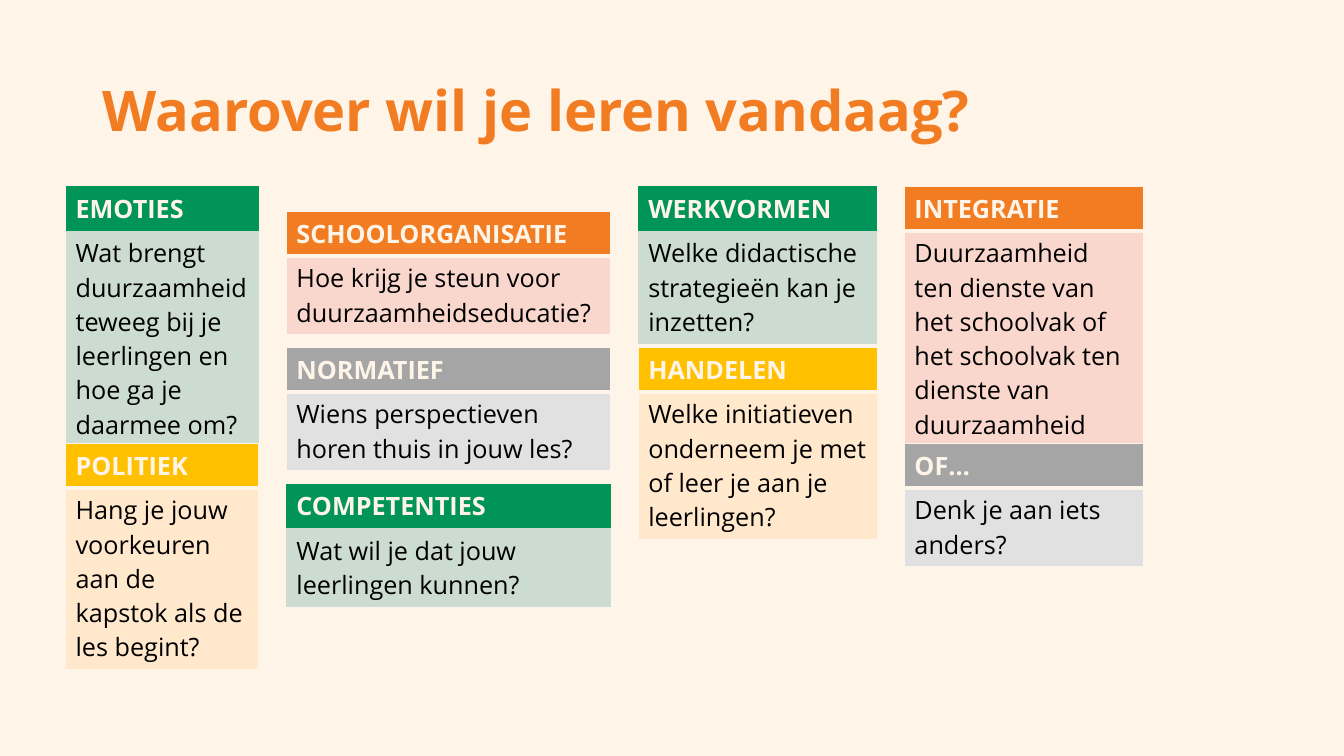
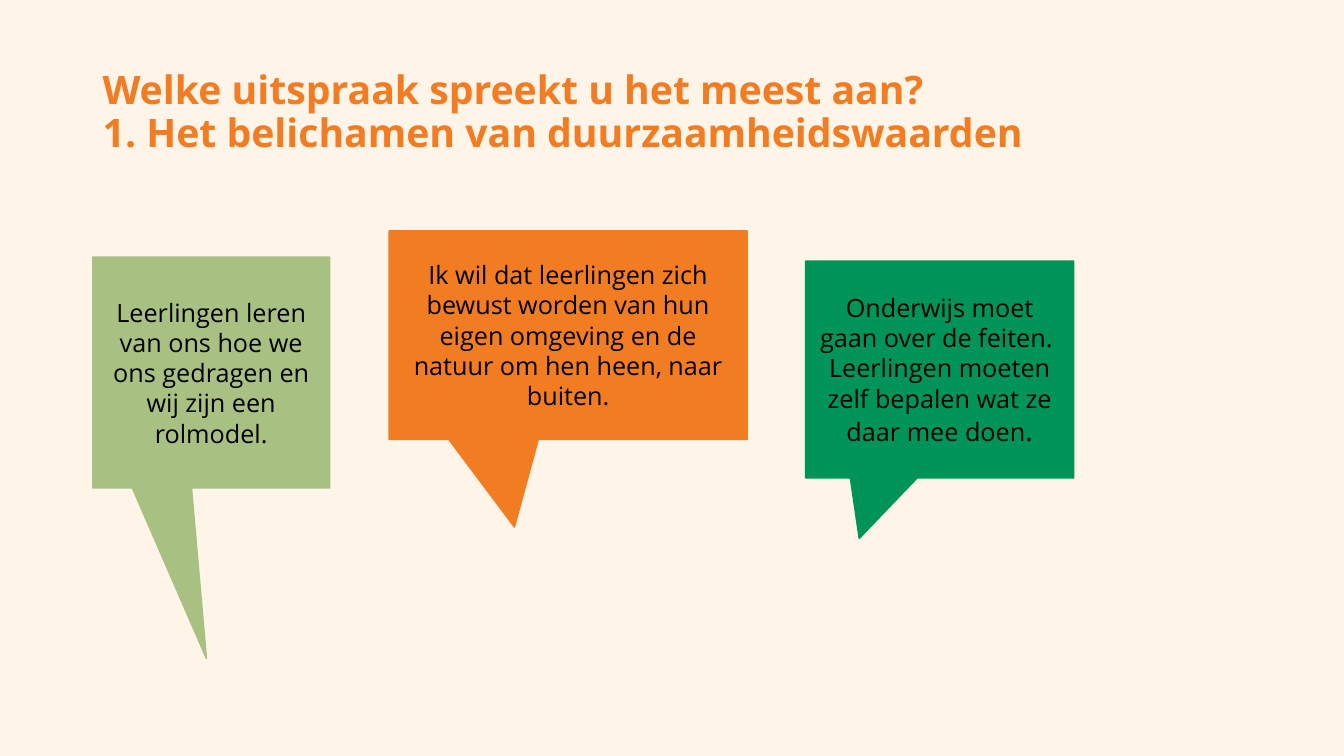
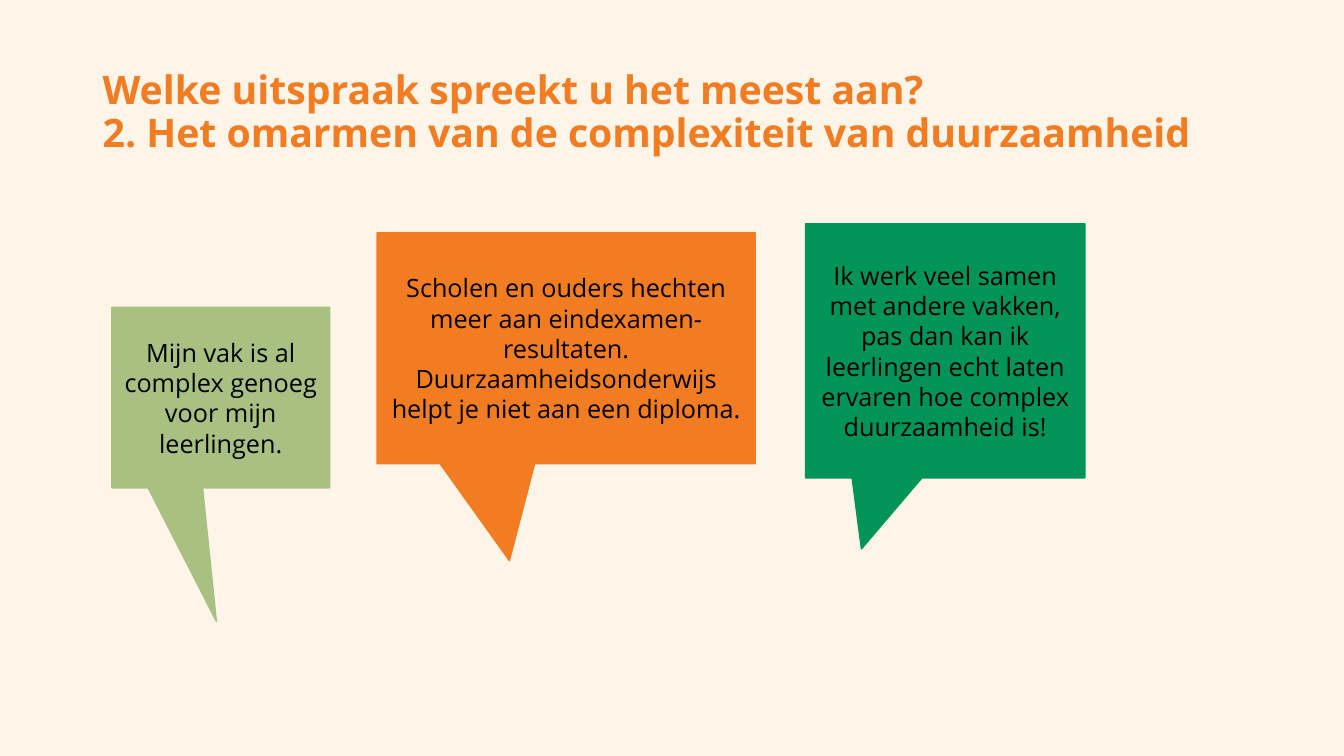
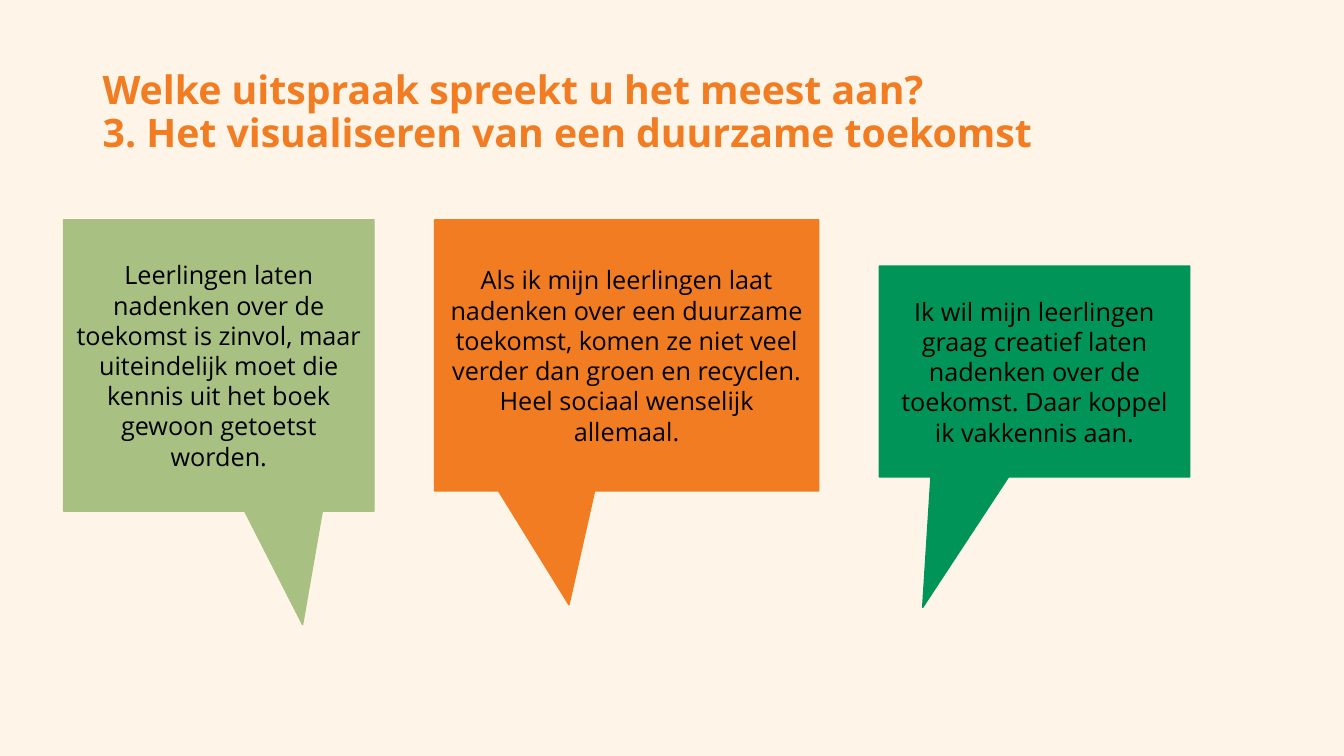
from dataclasses import dataclass

import lxml.etree
import pptx
import pptx.dml.color
import pptx.enum.shapes
import pptx.enum.text
import pptx.oxml.ns
import pptx.presentation
import pptx.slide
import pptx.table
import pptx.text.text
import pptx.util

Inches = pptx.util.Inches
Pt = pptx.util.Pt
RGBColor = pptx.dml.color.RGBColor
qn = pptx.oxml.ns.qn

# Shared style
CREAM = RGBColor(0xFE, 0xF4, 0xE8)
ORANGE = RGBColor(0xF2, 0x7C, 0x22)
GREEN = RGBColor(0x00, 0x94, 0x58)
SAGE = RGBColor(0xA8, 0xC0, 0x82)
YELLOW = RGBColor(0xFF, 0xC0, 0x00)
GREY = RGBColor(0xA5, 0xA5, 0xA5)
PALE_GREEN = RGBColor(0xCC, 0xDC, 0xD1)
PALE_ORANGE = RGBColor(0xFA, 0xD7, 0xCD)
PALE_YELLOW = RGBColor(0xFF, 0xE8, 0xCC)
PALE_GREY = RGBColor(0xE1, 0xE1, 0xE1)
BLACK = RGBColor(0x00, 0x00, 0x00)
FONT = "Open Sans"
BODY_SIZE = 18
PLAIN_TABLE_STYLE = "{2D5ABB26-0587-4C30-8999-92F81FD0307C}"

# Topic grid: a row is as high as its lines of text plus the cell margins
GRID_LEFT = 0.65
COLUMN_GAP = 0.27
LINE_HEIGHT = 0.34
CELL_MARGINS = 0.1


@dataclass(frozen=True)
class Palette:
    header: RGBColor
    body: RGBColor
    bordered: bool = True


GREEN_TOPIC = Palette(GREEN, PALE_GREEN, bordered=False)
ORANGE_TOPIC = Palette(ORANGE, PALE_ORANGE)
YELLOW_TOPIC = Palette(YELLOW, PALE_YELLOW)
GREY_TOPIC = Palette(GREY, PALE_GREY)


@dataclass(frozen=True)
class Topic:
    heading: str
    question: str
    top: float
    lines: int
    palette: Palette


@dataclass(frozen=True)
class Column:
    width: float
    topics: tuple[Topic, ...]


@dataclass(frozen=True)
class Callout:
    left: float
    top: float
    width: float
    height: float
    tip: tuple[float, float]
    paragraphs: tuple[str, ...]
    large_ending: str = ""


@dataclass(frozen=True)
class Theme:
    title: str
    callouts: tuple[Callout, ...]


COLUMNS = (
    Column(1.92, (
        Topic("EMOTIES", "Wat brengt duurzaamheid teweeg bij je leerlingen en hoe ga je daarmee om?",
              1.85, 6, GREEN_TOPIC),
        Topic("POLITIEK", "Hang je jouw voorkeuren aan de kapstok als de les begint?",
              4.4, 5, YELLOW_TOPIC),
    )),
    Column(3.22, (
        Topic("SCHOOLORGANISATIE", "Hoe krijg je steun voor duurzaamheidseducatie?",
              2.1, 2, ORANGE_TOPIC),
        Topic("NORMATIEF", "Wiens perspectieven horen thuis in jouw les?",
              3.45, 2, GREY_TOPIC),
        Topic("COMPETENTIES", "Wat wil je dat jouw leerlingen kunnen?",
              4.8, 2, GREEN_TOPIC),
    )),
    Column(2.37, (
        Topic("WERKVORMEN", "Welke didactische strategieën kan je inzetten?",
              1.85, 3, GREEN_TOPIC),
        Topic("HANDELEN", "Welke initiatieven onderneem je met of leer je aan je leerlingen?",
              3.45, 4, YELLOW_TOPIC),
    )),
    Column(2.37, (
        Topic("INTEGRATIE",
              "Duurzaamheid ten dienste van het schoolvak of het schoolvak ten dienste van duurzaamheid",
              1.85, 6, ORANGE_TOPIC),
        Topic("OF…", "Denk je aan iets anders?", 4.4, 2, GREY_TOPIC),
    )),
)

# Callouts on each slide run from left to right in these colours
CALLOUT_COLORS = (SAGE, ORANGE, GREEN)
QUESTION = "Welke uitspraak spreekt u het meest aan?"
LEFT_TIP = (-0.02, 1.24)
MIDDLE_TIP = (-0.15, 0.92)
RIGHT_TIP = (-0.3, 0.78)

THEMES = (
    Theme("Het belichamen van duurzaamheidswaarden", (
        Callout(0.92, 2.55, 2.35, 2.29, LEFT_TIP,
                ("Leerlingen leren van ons hoe we ons gedragen en wij zijn een rolmodel.",)),
        Callout(3.86, 2.29, 3.55, 2.07, MIDDLE_TIP,
                ("Ik wil dat leerlingen zich bewust worden van hun eigen omgeving en de natuur "
                 "om hen heen, naar buiten.",)),
        Callout(7.99, 2.59, 2.66, 2.15, RIGHT_TIP,
                ("Onderwijs moet gaan over de feiten. \n"
                 "Leerlingen moeten zelf bepalen wat ze daar mee doen",), large_ending="."),
    )),
    Theme("Het omarmen van de complexiteit van duurzaamheid", (
        Callout(1.11, 3.05, 2.16, 1.79, LEFT_TIP,
                ("Mijn vak is al complex genoeg voor mijn leerlingen.",)),
        Callout(3.74, 2.31, 3.75, 2.29, MIDDLE_TIP,
                ("Scholen en ouders hechten meer aan eindexamen-",
                 "resultaten. Duurzaamheidsonderwijs helpt je niet aan een diploma.")),
        Callout(7.99, 2.22, 2.77, 2.52, RIGHT_TIP,
                ("Ik werk veel samen met andere vakken, pas dan kan ik leerlingen echt laten "
                 "ervaren hoe complex duurzaamheid is!",)),
    )),
    Theme("Het visualiseren van een duurzame toekomst", (
        Callout(0.63, 2.18, 3.08, 2.89, (0.27, 0.89),
                ("Leerlingen laten nadenken over de toekomst is zinvol, maar uiteindelijk moet "
                 "die kennis uit het boek gewoon getoetst worden.",)),
        Callout(4.31, 2.18, 3.81, 2.69, MIDDLE_TIP,
                ("Als ik mijn leerlingen laat nadenken over een duurzame toekomst, komen ze niet "
                 "veel verder dan groen en recyclen. Heel sociaal wenselijk allemaal.",)),
        Callout(8.72, 2.64, 3.08, 2.09, (-0.36, 1.12),
                ("Ik wil mijn leerlingen graag creatief laten nadenken over de toekomst. "
                 "Daar koppel ik vakkennis aan.",)),
    )),
)


def style_font(font: pptx.text.text.Font, size: float, color: RGBColor, bold: bool = False) -> None:
    font.name = FONT
    font.size = Pt(size)
    font.bold = bold
    font.color.rgb = color


def add_page(deck: pptx.presentation.Presentation, title: str, size: float) -> pptx.slide.Slide:
    """Add a blank slide with the shared title style."""
    page = deck.slides.add_slide(deck.slide_layouts[6])
    box = page.shapes.add_textbox(Inches(0.92), Inches(0.4), Inches(11.5), Inches(1.45))
    frame = box.text_frame
    frame.word_wrap = True
    frame.vertical_anchor = pptx.enum.text.MSO_ANCHOR.MIDDLE
    para = frame.paragraphs[0]
    para.text = title
    para.line_spacing = 0.9
    style_font(para.font, size, ORANGE, bold=True)
    return page


def set_borders(cell: pptx.table._Cell, bottom: float) -> None:
    """Draw cream borders, 1 pt except for the bottom one."""
    properties = cell._tc.get_or_add_tcPr()
    for index, (side, width) in enumerate((("L", 1), ("R", 1), ("T", 1), ("B", bottom))):
        line = lxml.etree.Element(qn(f"a:ln{side}"), w=str(Pt(width)))
        fill = lxml.etree.SubElement(line, qn("a:solidFill"))
        lxml.etree.SubElement(fill, qn("a:srgbClr"), val=str(CREAM))
        properties.insert(index, line)


def row_height(lines: int) -> float:
    return lines * LINE_HEIGHT + CELL_MARGINS


def add_topic(page: pptx.slide.Slide, topic: Topic, left: float, width: float) -> None:
    heights = (row_height(1), row_height(topic.lines))
    frame = page.shapes.add_table(2, 1, Inches(left), Inches(topic.top),
                                  Inches(width), Inches(sum(heights)))
    table = frame.table
    table.horz_banding = False
    table._tbl.tblPr.find(qn("a:tableStyleId")).text = PLAIN_TABLE_STYLE
    palette = topic.palette
    rows = (
        (topic.heading, palette.header, CREAM, True, 3),
        (topic.question, palette.body, BLACK, False, 1),
    )
    for index, (text, fill, color, bold, bottom) in enumerate(rows):
        table.rows[index].height = Inches(heights[index])
        cell = table.cell(index, 0)
        cell.fill.solid()
        cell.fill.fore_color.rgb = fill
        para = cell.text_frame.paragraphs[0]
        para.text = text
        style_font(para.font, BODY_SIZE, color, bold)
        if palette.bordered:
            set_borders(cell, bottom)


def add_callout(page: pptx.slide.Slide, callout: Callout, color: RGBColor) -> None:
    shape = page.shapes.add_shape(
        pptx.enum.shapes.MSO_SHAPE.RECTANGULAR_CALLOUT,
        Inches(callout.left), Inches(callout.top), Inches(callout.width), Inches(callout.height))
    shape.adjustments[0], shape.adjustments[1] = callout.tip
    shape.shadow.inherit = False
    shape.fill.solid()
    shape.fill.fore_color.rgb = color
    shape.line.color.rgb = color
    shape.line.width = Pt(1)
    frame = shape.text_frame
    frame.word_wrap = True
    frame.vertical_anchor = pptx.enum.text.MSO_ANCHOR.MIDDLE
    for index, text in enumerate(callout.paragraphs):
        para = frame.add_paragraph() if index else frame.paragraphs[0]
        para.text = text
        para.alignment = pptx.enum.text.PP_ALIGN.CENTER
        style_font(para.font, BODY_SIZE, BLACK)
    if callout.large_ending:
        span = para.add_run()
        span.text = callout.large_ending
        span.font.size = Pt(20)


def main() -> None:
    deck = pptx.Presentation()
    deck.slide_width = Inches(13.33)
    deck.slide_height = Inches(7.5)
    background = deck.slide_master.background.fill
    background.solid()
    background.fore_color.rgb = CREAM

    # Topic overview
    page = add_page(deck, "Waarover wil je leren vandaag?", 40)
    left = GRID_LEFT
    for column in COLUMNS:
        for topic in column.topics:
            add_topic(page, topic, left, column.width)
        left += column.width + COLUMN_GAP

    # Statements per theme
    for number, theme in enumerate(THEMES, start=1):
        page = add_page(deck, f"{QUESTION}\n{number}. {theme.title}", 28)
        for callout, color in zip(theme.callouts, CALLOUT_COLORS):
            add_callout(page, callout, color)

    deck.save("out.pptx")


if __name__ == "__main__":
    main()
